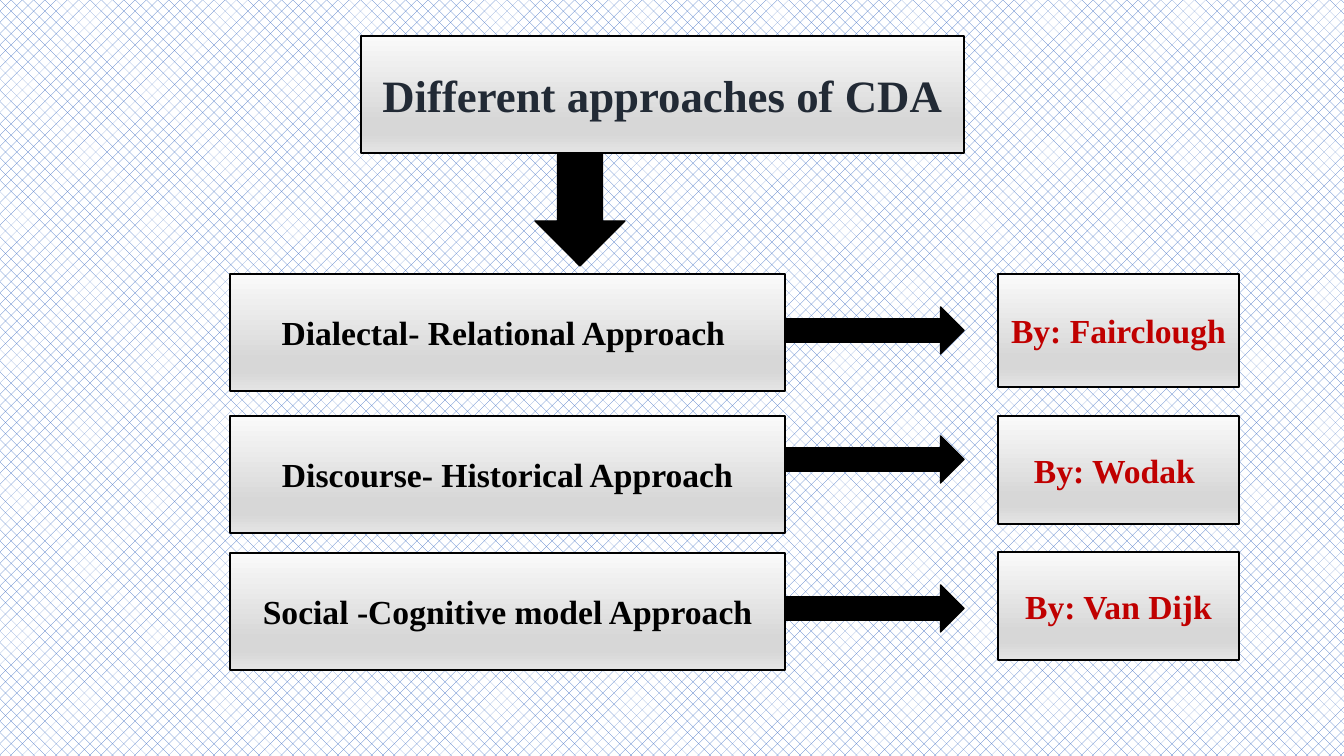
from dataclasses import dataclass

from lxml.etree import SubElement
from pptx import Presentation
from pptx.dml.color import RGBColor
from pptx.enum.dml import MSO_PATTERN
from pptx.enum.shapes import MSO_SHAPE
from pptx.enum.text import MSO_ANCHOR, PP_ALIGN
from pptx.oxml.ns import qn
from pptx.shapes.autoshape import Shape
from pptx.slide import Slide
from pptx.util import Emu, Pt


@dataclass(frozen=True)
class Theme:
    font: str = "Times New Roman"
    title_size: int = 32
    label_size: int = 24
    title: str = "222A35"
    black: str = "000000"
    author: str = "C00000"
    pattern: str = "4472C4"
    paper: str = "FFFFFF"
    panel_stops: tuple[tuple[int, str], ...] = (
        (0, "FAFAFA"), (74, "D7D7D7"), (83, "D7D7D7"), (100, "E4E4E4"))


@dataclass(frozen=True)
class Box:
    left: int
    top: int
    width: int
    height: int


@dataclass(frozen=True)
class Approach:
    name: str
    author: str
    name_top: int
    arrow_top: int
    author_top: int
    author_height: int


THEME = Theme()
APPROACHES = (
    Approach("Dialectal- Relational Approach ", "By: Fairclough ", 274, 307, 274, 113),
    Approach("Discourse- Historical Approach", "By: Wodak ", 416, 436, 416, 108),
    Approach("Social -Cognitive model Approach", "By: Van Dijk", 553, 585, 552, 108),
)


def px(length: int) -> Emu:
    return Emu(round(length * 914400 / 100.8))


def rgb(colour: str) -> RGBColor:
    return RGBColor.from_string(colour)


def add_outlined(slide: Slide, kind: MSO_SHAPE, box: Box) -> Shape:
    shape = slide.shapes.add_shape(
        kind, px(box.left), px(box.top), px(box.width), px(box.height))
    shape.shadow.inherit = False
    shape.line.color.rgb = rgb(THEME.black)
    shape.line.width = Pt(1)
    return shape


def add_arrow(slide: Slide, kind: MSO_SHAPE, box: Box) -> None:
    arrow = add_outlined(slide, kind, box)
    arrow.fill.solid()
    arrow.fill.fore_color.rgb = rgb(THEME.black)


def fill_panel(panel: Shape) -> None:
    """Apply the theme's grey gradient from top to bottom."""
    panel.fill.gradient()
    panel.fill.gradient_angle = 270
    stops = panel.fill._xPr.find(qn("a:gradFill")).find(qn("a:gsLst"))
    for stop in list(stops):
        stops.remove(stop)
    for percent, colour in THEME.panel_stops:
        stop = SubElement(stops, qn("a:gs"), pos=str(percent * 1000))
        SubElement(stop, qn("a:srgbClr"), val=colour)


def add_panel(slide: Slide, box: Box, text: str, colour: str,
              size: int = THEME.label_size) -> None:
    panel = add_outlined(slide, MSO_SHAPE.RECTANGLE, box)
    fill_panel(panel)
    frame = panel.text_frame
    frame.word_wrap = True
    frame.vertical_anchor = MSO_ANCHOR.MIDDLE
    paragraph = frame.paragraphs[0]
    paragraph.text = text
    paragraph.alignment = PP_ALIGN.CENTER
    font = paragraph.font
    font.name, font.size, font.bold = THEME.font, Pt(size), True
    font.color.rgb = rgb(colour)


def add_approach(slide: Slide, approach: Approach) -> None:
    add_panel(slide, Box(230, approach.name_top, 555, 117), approach.name, THEME.black)
    add_arrow(slide, MSO_SHAPE.RIGHT_ARROW, Box(785, approach.arrow_top, 179, 47))
    add_panel(slide, Box(998, approach.author_top, 241, approach.author_height),
              approach.author, THEME.author)


def main() -> None:
    deck = Presentation()
    deck.slide_width, deck.slide_height = px(1344), px(756)
    slide = deck.slides.add_slide(deck.slide_layouts[6])

    backdrop = slide.background.fill
    backdrop.patterned()
    backdrop.pattern = MSO_PATTERN.PERCENT_25
    backdrop.fore_color.rgb = rgb(THEME.pattern)
    backdrop.back_color.rgb = rgb(THEME.paper)

    add_panel(slide, Box(361, 36, 603, 117), "Different approaches of CDA",
              THEME.title, THEME.title_size)
    add_arrow(slide, MSO_SHAPE.DOWN_ARROW, Box(535, 153, 90, 113))
    for approach in APPROACHES:
        add_approach(slide, approach)
    deck.save("out.pptx")


if __name__ == "__main__":
    main()
